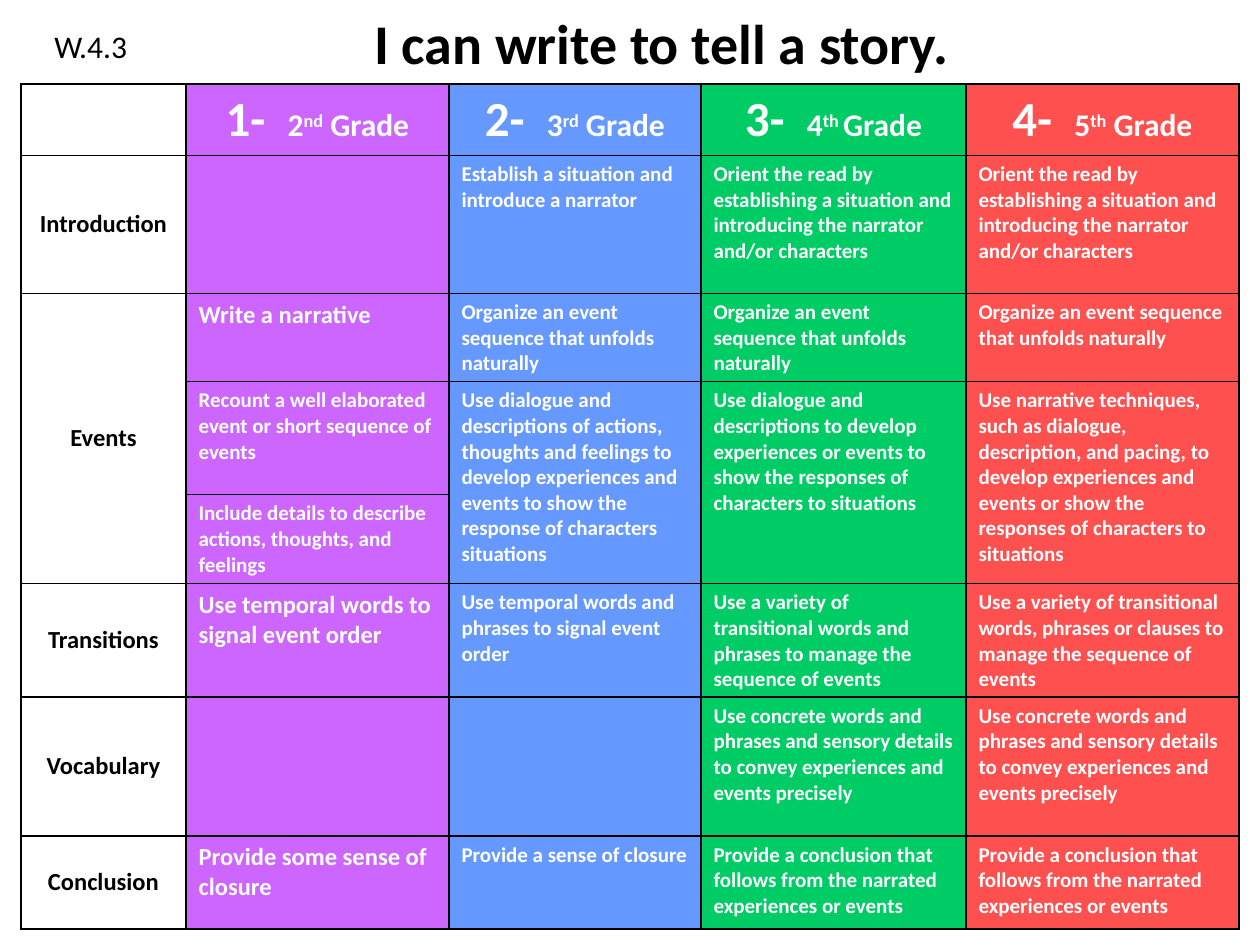
from lxml.etree import SubElement
from pptx import Presentation
from pptx.dml.color import RGBColor
from pptx.enum.text import MSO_ANCHOR, MSO_AUTO_SIZE, PP_ALIGN
from pptx.oxml.ns import qn
from pptx.util import Emu, Pt

PX = 914400 / 126
FONT = "Calibri"
COLORS = {"black": "000000", "white": "FFFFFF", "purple": "CC66FF",
          "blue": "6699FF", "green": "00CC66", "red": "FF5050"}
GRADE_FILLS = ["purple", "blue", "green", "red"]

COLUMN_WIDTHS = [165, 263, 252, 265, 273]
ROW_HEIGHTS = [71, 138, 88, 113, 89, 113, 139, 93]

GRADES = [("1-  ", "2", "nd", " Grade"), ("2-  ", "3", "rd", " Grade"),
          ("3-  ", "4", "th ", "Grade"), ("4-  ", "5", "th", " Grade")]

ORIENT = ("Orient the read by establishing a situation and introducing "
          "the narrator and/or characters")
ORGANIZE = "Organize an event sequence that unfolds naturally"
CONCRETE = ("Use concrete words and phrases and sensory details to convey "
            "experiences and events precisely")
CONCLUDE = "Provide a conclusion that follows from the narrated experiences or events"

# Row label, then one skill per grade
RUBRIC = [
    ["Introduction", "", "Establish a situation and introduce a narrator", ORIENT, ORIENT],
    ["Events", "Write a narrative", ORGANIZE, ORGANIZE, ORGANIZE],
    ["", "Recount a well elaborated event or short sequence of events",
     "Use dialogue and descriptions of actions, thoughts and feelings to develop "
     "experiences and events to show the response of characters situations",
     "Use dialogue and descriptions to develop experiences or events to show "
     "the responses of characters to situations",
     "Use narrative techniques, such as dialogue, description, and pacing, to develop "
     "experiences and events or show the responses of characters to situations"],
    ["", "Include details to describe actions, thoughts, and feelings", "", "", ""],
    ["Transitions", "Use temporal words to signal event order",
     "Use temporal words and phrases to signal event order",
     "Use a variety of transitional words and phrases to manage the sequence of events",
     "Use a variety of transitional words, phrases or clauses to manage "
     "the sequence of events"],
    ["Vocabulary", "", "", CONCRETE, CONCRETE],
    ["Conclusion", "Provide some sense of closure", "Provide a sense of closure",
     CONCLUDE, CONCLUDE],
]
LARGE_SKILL_ROWS = {2, 5, 7}  # rows whose first-grade skill is set larger


def px(length):
    return Emu(round(length * PX))


class PageBuilder:
    def __init__(self, page):
        self.page = page

    def style(self, span, size, color="black", bold=False):
        font = span.font
        font.name, font.size, font.bold = FONT, Pt(size), bold
        font.color.rgb = RGBColor.from_string(COLORS[color])

    def place(self, box, left, top, width, height):
        box.left, box.top = px(left), px(top)
        box.width, box.height = px(width), px(height)

    def title(self, text, *bounds):
        box = self.page.shapes.title
        self.place(box, *bounds)
        frame = box.text_frame
        frame.text = text
        frame.auto_size = MSO_AUTO_SIZE.NONE
        frame.vertical_anchor = MSO_ANCHOR.MIDDLE
        para = frame.paragraphs[0]
        para.alignment = PP_ALIGN.CENTER
        self.style(para.runs[0], 32, bold=True)

    def label(self, text, *bounds):
        box = self.page.shapes.add_textbox(*map(px, bounds))
        frame = box.text_frame
        frame.word_wrap = True
        frame.auto_size = MSO_AUTO_SIZE.SHAPE_TO_FIT_TEXT
        frame.text = text
        self.style(frame.paragraphs[0].runs[0], 18)

    def table(self, left, top, widths, heights):
        table = self.page.shapes.add_table(
            len(heights), len(widths), px(left), px(top),
            px(sum(widths)), px(sum(heights))).table
        for column, width in zip(table.columns, widths):
            column.width = px(width)
        for row, height in zip(table.rows, heights):
            row.height = px(height)
        return table

    def cell(self, cell, fill=None):
        properties = cell._tc.get_or_add_tcPr()
        for side in ("lnL", "lnR", "lnT", "lnB"):
            line = SubElement(properties, qn(f"a:{side}"), w=str(Pt(1)))
            paint = SubElement(line, qn("a:solidFill"))
            SubElement(paint, qn("a:srgbClr"), val=COLORS["black"])
        if fill:
            cell.fill.solid()
            cell.fill.fore_color.rgb = RGBColor.from_string(COLORS[fill])
        else:
            cell.fill.background()

    def cell_text(self, cell, text, size, color="white", centered=False):
        cell.text = text
        para = cell.text_frame.paragraphs[0]
        if centered:
            para.alignment = PP_ALIGN.CENTER
            cell.vertical_anchor = MSO_ANCHOR.MIDDLE
        for span in para.runs:
            self.style(span, size, color, bold=True)

    def grade_heading(self, cell, parts):
        para = cell.text_frame.paragraphs[0]
        para.alignment = PP_ALIGN.CENTER
        for index, part in enumerate(parts):
            span = para.add_run()
            span.text = part
            self.style(span, 18 if index else 28, "white", bold=True)
            if index == 2:  # ordinal suffix is raised
                span._r.get_or_add_rPr().set("baseline", "30000")


def main():
    deck = Presentation()
    deck.slide_width, deck.slide_height = px(1260), px(945)
    builder = PageBuilder(deck.slides.add_slide(deck.slide_layouts[5]))

    # Heading and standard code
    builder.title("I can write to tell a story.", 126, 0, 1071, 84)
    builder.label("W.4.3", 42, 21, 179, 50)

    # Rubric grid
    table = builder.table(21, 84, COLUMN_WIDTHS, ROW_HEIGHTS)
    for row in range(len(ROW_HEIGHTS)):
        for column, fill in enumerate([None] + GRADE_FILLS):
            builder.cell(table.cell(row, column), fill)

    # Grade headings
    for column, parts in enumerate(GRADES, 1):
        builder.grade_heading(table.cell(0, column), parts)

    # Row labels and skills
    for row, (label, *skills) in enumerate(RUBRIC, 1):
        builder.cell_text(table.cell(row, 0), label, 14, "black", centered=True)
        for column, skill in enumerate(skills, 1):
            large = column == 1 and row in LARGE_SKILL_ROWS
            builder.cell_text(table.cell(row, column), skill, 14 if large else 12)

    # Events label spans three rows, its later skills span two
    table.cell(2, 0).merge(table.cell(4, 0))
    for column in (2, 3, 4):
        table.cell(3, column).merge(table.cell(4, column))

    deck.save("out.pptx")


if __name__ == "__main__":
    main()
